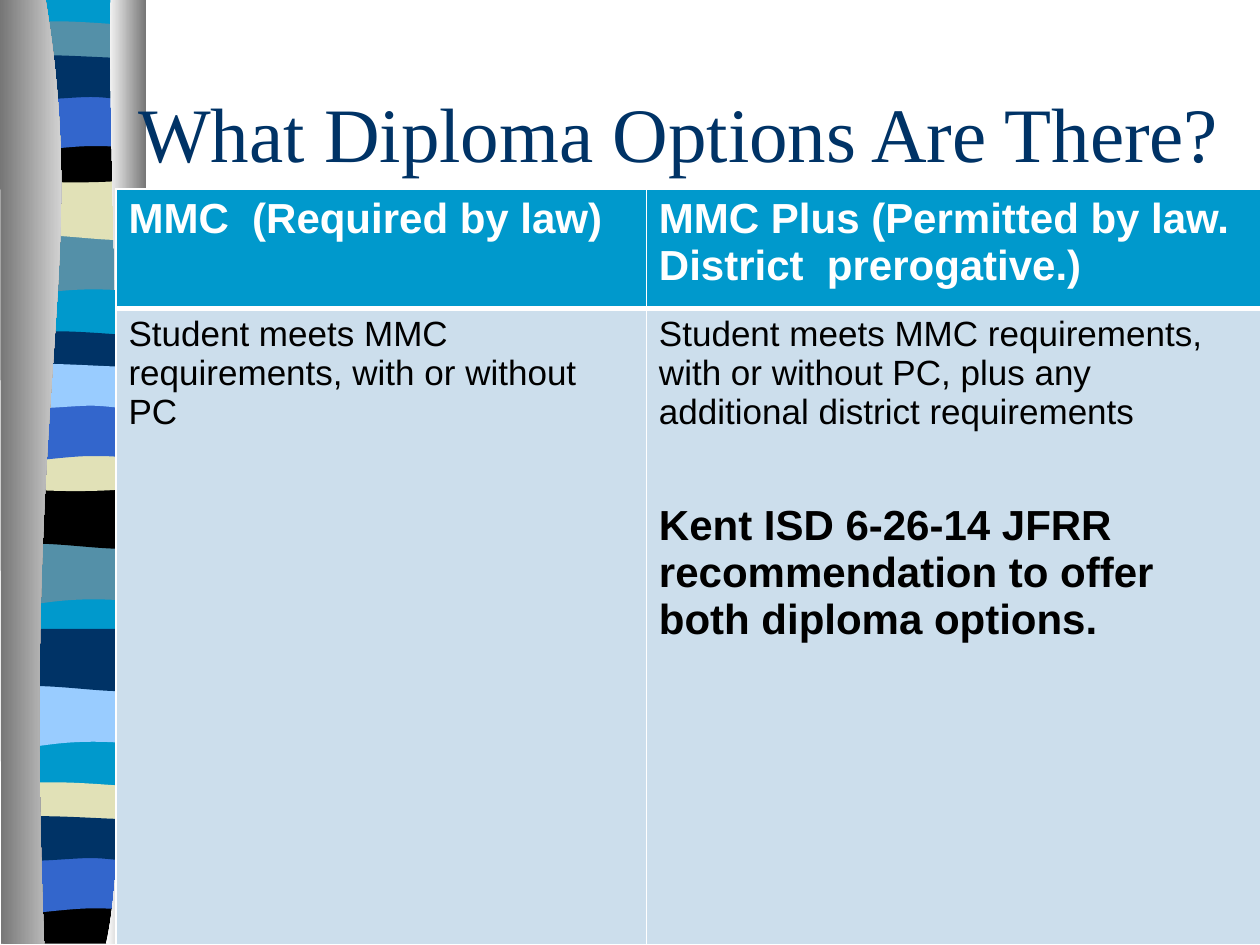
from lxml import etree
from pptx import Presentation
from pptx.dml.color import RGBColor
from pptx.enum.text import MSO_ANCHOR
from pptx.oxml.ns import qn
from pptx.util import Inches, Pt

MIDDLE = MSO_ANCHOR.MIDDLE

THEME = {
    "cyan": "0099CC", "teal": "5490A8", "sand": "E1E1B7", "black": "000000",
    "blue": "3366CC", "navy": "003366", "sky": "99CCFF", "white": "FFFFFF",
    "gray": "767676", "pale": "CCDEEC",
    "title": {"name": "Times New Roman", "size": Pt(44), "bold": False},
    "head": {"name": "Arial", "size": Pt(24), "bold": True},
    "body": {"name": "Arial", "size": Pt(20), "bold": False},
    "note": {"name": "Arial", "size": Pt(24), "bold": True},
}


def trace(path, top=0):
    """Draw a closed outline; a 2-tuple is a line, a 6-tuple a Bezier curve."""
    pts = [(Inches(step[i]), Inches(step[i + 1] + top))
           for step in path for i in range(0, len(step), 2)]
    pen = slide.shapes.build_freeform(*pts[0])
    pen.add_line_segments(pts[1:], close=True)
    shape = pen.convert_to_shape()
    lines = iter(list(shape._element.iter(qn("a:lnTo"))))
    for step in path[1:]:
        first = next(lines)
        if len(step) == 6:
            curve = etree.Element(qn("a:cubicBezTo"))
            first.addprevious(curve)
            for line in (first, next(lines), next(lines)):
                curve.append(line[0])
                line.getparent().remove(line)
    shape.shadow.inherit = False
    shape.line.fill.background()
    return shape


def write(para, text, style, color):
    run = para.add_run()
    run.text = text
    for key, value in THEME[style].items():
        setattr(run.font, key, value)
    run.font.color.rgb = RGBColor.from_string(THEME[color])


prs = Presentation()
prs.slide_width, prs.slide_height = Inches(10), Inches(7.5)
slide = prs.slides.add_slide(prs.slide_layouts[6])

# Ribbon of waves down the left side
WAVES = {
    "base": [(1.14, 0), (1.14, 7.47), (0.05, 7.47), (0.05, 0)],
    "sag": [(1.14, 0), (1.14, 0.47), (0.39, 0.39, 0.24, 0.55, 0.05, 0.47), (0.05, 0)],
    "dip": [(1.14, 0), (1.14, 0.47), (0.96, 0.55, 0.39, 0.41, 0.06, 0.47), (0.06, 0)],
    "swell": [(1.14, 0.05), (1.14, 0.29), (0.96, 0.34, 0.24, 0.34, 0.05, 0.29),
              (0.05, 0.05), (0.12, 0, 0.29, 0.01, 0.47, 0.01),
              (0.65, 0.01, 1, 0.04, 1.14, 0.05)],
    "bowl": [(1.14, 0), (1.14, 0.33), (0.96, 0.38, 0.24, 0.38, 0.06, 0.33),
             (0.06, 0), (0.72, 0.05, 0.91, 0, 1.14, 0)],
    "foot": [(1.13, 0), (1.13, 0.37), (0.06, 0.37), (0.05, 0),
             (0.71, 0.05, 0.9, 0, 1.13, 0)],
    "crest": [(1.14, 0), (1.14, 0.47), (0.97, 0.42, 0.9, 0.42, 0.72, 0.42),
              (0.54, 0.42, 0.22, 0.47, 0.06, 0.47), (0.06, 0)],
    "roll": [(1.14, 0.05), (1.14, 0.36), (1.07, 0.41, 0.9, 0.36, 0.72, 0.36),
             (0.54, 0.36, 0.17, 0.41, 0.05, 0.36), (0.05, 0.05),
             (0.21, 0, 0.79, 0.05, 0.97, 0.05),
             (1.15, 0.05, 1.1, 0.05, 1.14, 0.05)],
}
BANDS = [
    ("base", 0, "cyan"),
    ("sag", 1.85, "teal"), ("dip", 1.41, "sand"), ("swell", 0.16, "teal"),
    ("bowl", 1.08, "black"), ("crest", 0.74, "blue"), ("roll", 0.41, "navy"),
    ("sag", 4.31, "teal"), ("dip", 3.86, "black"), ("swell", 2.62, "navy"),
    ("bowl", 3.53, "sand"), ("crest", 3.2, "blue"), ("roll", 2.86, "sky"),
    ("sag", 5.44, "sky"), ("dip", 4.99, "navy"), ("swell", 6.2, "sand"),
    ("foot", 7.12, "black"), ("crest", 6.79, "blue"), ("roll", 6.45, "navy"),
]
for wave, top, color in BANDS:
    band = trace(WAVES[wave], top)
    band.fill.solid()
    band.fill.fore_color.rgb = RGBColor.from_string(THEME[color])

# Shaded edges of the ribbon
EDGES = [
    ([(0.36, -0.01), (0.72, 2.16, 0.17, 2.96, 0.35, 7.49), (0.01, 7.49), (0, -0.01)],
     ("gray", "white")),
    ([(0.88, -0.01), (0.84, 1.25, 1.11, 6.46, 0.84, 7.49), (1.16, 7.49), (1.16, 0)],
     ("white", "gray")),
]
for path, shades in EDGES:
    fill = trace(path).fill
    fill.gradient()
    fill.gradient_angle = 0
    for stop, shade, place in zip(fill.gradient_stops, shades, (0, 1)):
        stop.color.rgb = RGBColor.from_string(THEME[shade])
        stop.position = place

# Diploma table
CELLS = [
    [[("MMC  (Required by law)", "head")],
     [("MMC Plus (Permitted by law.  District  prerogative.)", "head")]],
    [[("Student meets MMC requirements, with or without PC", "body")],
     [("Student meets MMC requirements, with or without PC, plus any "
       "additional district requirements", "body"),
      ("Kent ISD 6-26-14 JFRR recommendation to offer both diploma options.", "note")]],
]
ROWS = [(0.95, "cyan", "white", 3), (5.05, "pale", "black", 1)]
table = slide.shapes.add_table(2, 2, Inches(0.92), Inches(1.5),
                               Inches(9.08), Inches(6)).table
for col, width in zip(table.columns, (4.21, 4.88)):
    col.width = Inches(width)
for r, (height, back, ink, rule) in enumerate(ROWS):
    table.rows[r].height = Inches(height)
    for c, paras in enumerate(CELLS[r]):
        cell = table.cell(r, c)
        for i, (text, style) in enumerate(paras):
            frame = cell.text_frame
            para = frame.add_paragraph() if i else frame.paragraphs[0]
            if i:
                para.space_before = Pt(40.3)
            write(para, text, style, ink)
        props = cell._tc.get_or_add_tcPr()
        top = ROWS[r - 1][3] if r else 1
        for side, width in zip("LRTB", (1, 1, top, rule)):
            line = etree.SubElement(props, qn(f"a:ln{side}"), w=str(Pt(width)))
            solid = etree.SubElement(line, qn("a:solidFill"))
            etree.SubElement(solid, qn("a:srgbClr"), val=THEME["white"])
        cell.fill.solid()
        cell.fill.fore_color.rgb = RGBColor.from_string(THEME[back])

# Title
title = slide.shapes.add_textbox(Inches(1), Inches(0.42), Inches(9), Inches(1.25))
title.text_frame.word_wrap = True
title.text_frame.vertical_anchor = MIDDLE
write(title.text_frame.paragraphs[0], "What Diploma Options Are There?", "title", "navy")

prs.save("out.pptx")
